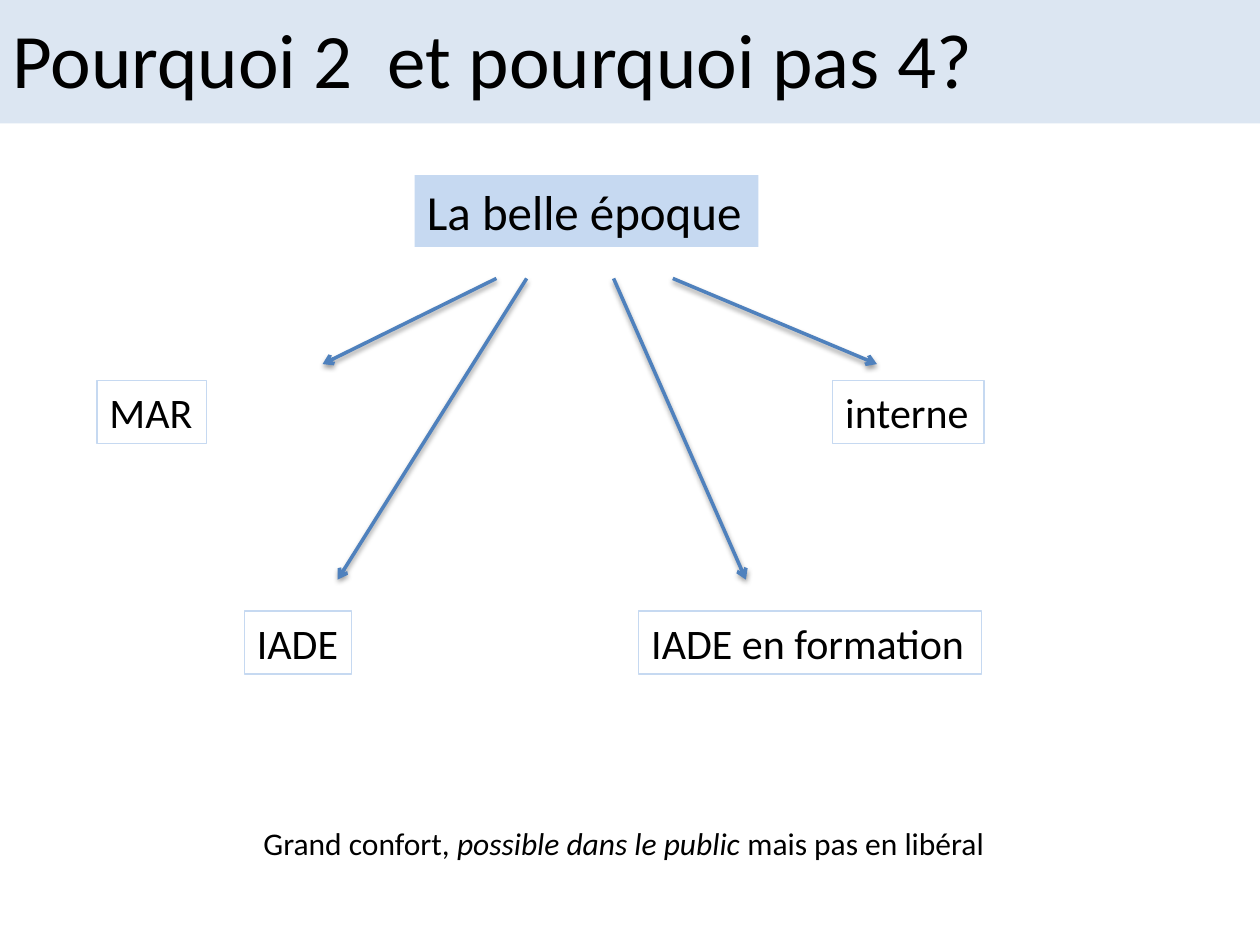
from dataclasses import dataclass

from lxml import etree
from pptx import Presentation
from pptx.dml.color import RGBColor
from pptx.enum.shapes import MSO_CONNECTOR, MSO_SHAPE
from pptx.enum.text import MSO_ANCHOR, MSO_AUTO_SIZE, PP_ALIGN
from pptx.oxml.ns import qn
from pptx.util import Inches, Pt

RECTANGLE = MSO_SHAPE.RECTANGLE
STRAIGHT = MSO_CONNECTOR.STRAIGHT
MIDDLE, TOP = MSO_ANCHOR.MIDDLE, MSO_ANCHOR.TOP
LEFT, CENTER = PP_ALIGN.LEFT, PP_ALIGN.CENTER
GROW = MSO_AUTO_SIZE.SHAPE_TO_FIT_TEXT

# The slide is a grid of 100 columns by 75 rows
COLUMNS, ROWS = 100, 75
CELL = Inches(0.1)


@dataclass(frozen=True)
class Theme:
    font: str = "Calibri"
    ink: str = "000000"
    band: str = "DCE6F2"
    pale_blue: str = "C6D9F1"
    arrow: str = "4F81BD"
    title: int = 44
    heading: int = 28
    role: int = 24
    note: int = 18
    border: float = 0.75
    arrow_width: float = 2


THEME = Theme()


def grid(*units):
    return [round(unit * CELL) for unit in units]


def color(value):
    return RGBColor.from_string(value)


def write(box, runs, size, align=LEFT, anchor=TOP, wrap=False):
    """Fill a box with one paragraph of (text, italic) runs."""
    frame = box.text_frame
    frame.word_wrap = wrap
    frame.vertical_anchor = anchor
    if not wrap:
        frame.auto_size = GROW
    para = frame.paragraphs[0]
    para.alignment = align
    for text, italic in runs:
        span = para.add_run()
        span.text = text
        span.font.name = THEME.font
        span.font.size = Pt(size)
        span.font.italic = italic
        span.font.color.rgb = color(THEME.ink)


def add_box(page, area, fill=None, border=None):
    box = page.shapes.add_shape(RECTANGLE, *grid(*area))
    box.shadow.inherit = False
    if fill:
        box.fill.solid()
        box.fill.fore_color.rgb = color(fill)
    else:
        box.fill.background()
    if border:
        box.line.color.rgb = color(border)
        box.line.width = Pt(THEME.border)
    else:
        box.line.fill.background()
    return box


def add_text(page, area, runs, size, **layout):
    write(page.shapes.add_textbox(*grid(*area)), runs, size, **layout)


def add_arrow(page, start, end):
    arrow = page.shapes.add_connector(STRAIGHT, *grid(*start, *end))
    arrow.line.color.rgb = color(THEME.arrow)
    arrow.line.width = Pt(THEME.arrow_width)
    etree.SubElement(arrow.line._get_or_add_ln(), qn("a:tailEnd"), type="arrow")
    # Soft shadow straight below the line
    effects = etree.SubElement(arrow._element.spPr, qn("a:effectLst"))
    shadow = etree.SubElement(
        effects, qn("a:outerShdw"), blurRad=str(Pt(3.1)), dist=str(Pt(1.6)),
        dir="5400000", rotWithShape="0")
    shade = etree.SubElement(shadow, qn("a:srgbClr"), val=THEME.ink)
    etree.SubElement(shade, qn("a:alpha"), val="38000")


def main():
    deck = Presentation()
    deck.slide_width, deck.slide_height = grid(COLUMNS, ROWS)
    page = deck.slides.add_slide(deck.slide_layouts[6])

    # Title band
    add_box(page, (0, 0, COLUMNS, 9.8), fill=THEME.band)
    add_text(page, (0, -0.3, COLUMNS, 9.7),
             [("Pourquoi 2  et pourquoi pas 4?", False)],
             THEME.title, anchor=MIDDLE, wrap=True)

    # Heading of the diagram
    heading = add_box(page, (32.9, 13.9, 27.3, 5.7), fill=THEME.pale_blue)
    write(heading, [("La belle époque", False)], THEME.heading)

    # Roles on two levels
    upper, lower, height = 30.2, 48.5, 5
    roles = [
        ("MAR", 7.7, upper, 8.7),
        ("interne", 66.1, upper, 12),
        ("IADE", 19.4, lower, 8.5),
        ("IADE en formation", 50.7, lower, 27.2),
    ]
    for name, left, top, width in roles:
        box = add_box(page, (left, top, width, height), border=THEME.pale_blue)
        write(box, [(name, False)], THEME.role)

    # Arrows from the heading down to each level
    origin, upper_tip, lower_tip = 22.1, 28.9, 46
    arrows = [
        (39.4, 25.6, upper_tip),
        (53.4, 69.6, upper_tip),
        (41.8, 26.8, lower_tip),
        (48.7, 59.2, lower_tip),
    ]
    for start, end, tip in arrows:
        add_arrow(page, (start, origin), (end, tip))

    # Closing remark
    add_text(page, (19.4, 64.9, 60.2, 4),
             [("Grand confort, ", False),
              ("possible dans le public ", True),
              ("mais pas en libéral", False)],
             THEME.note, align=CENTER)

    deck.save("out.pptx")


if __name__ == "__main__":
    main()
